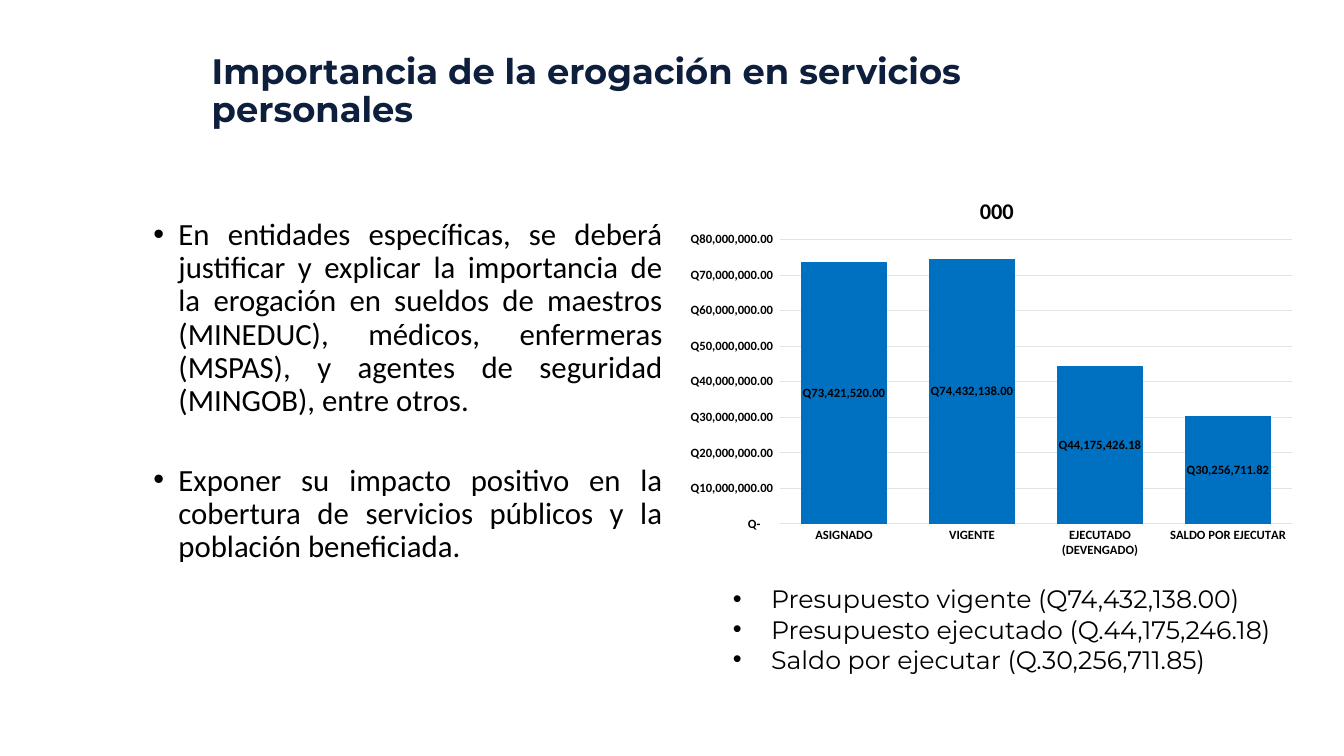
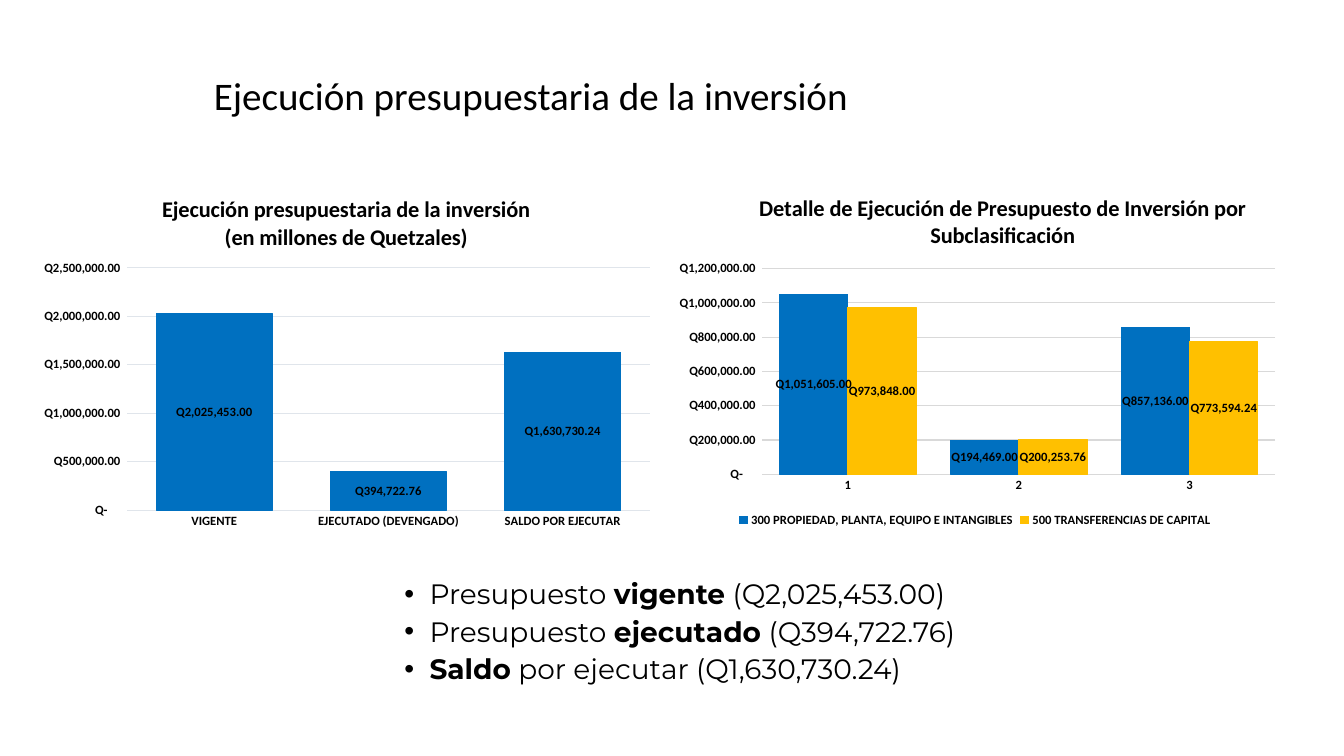
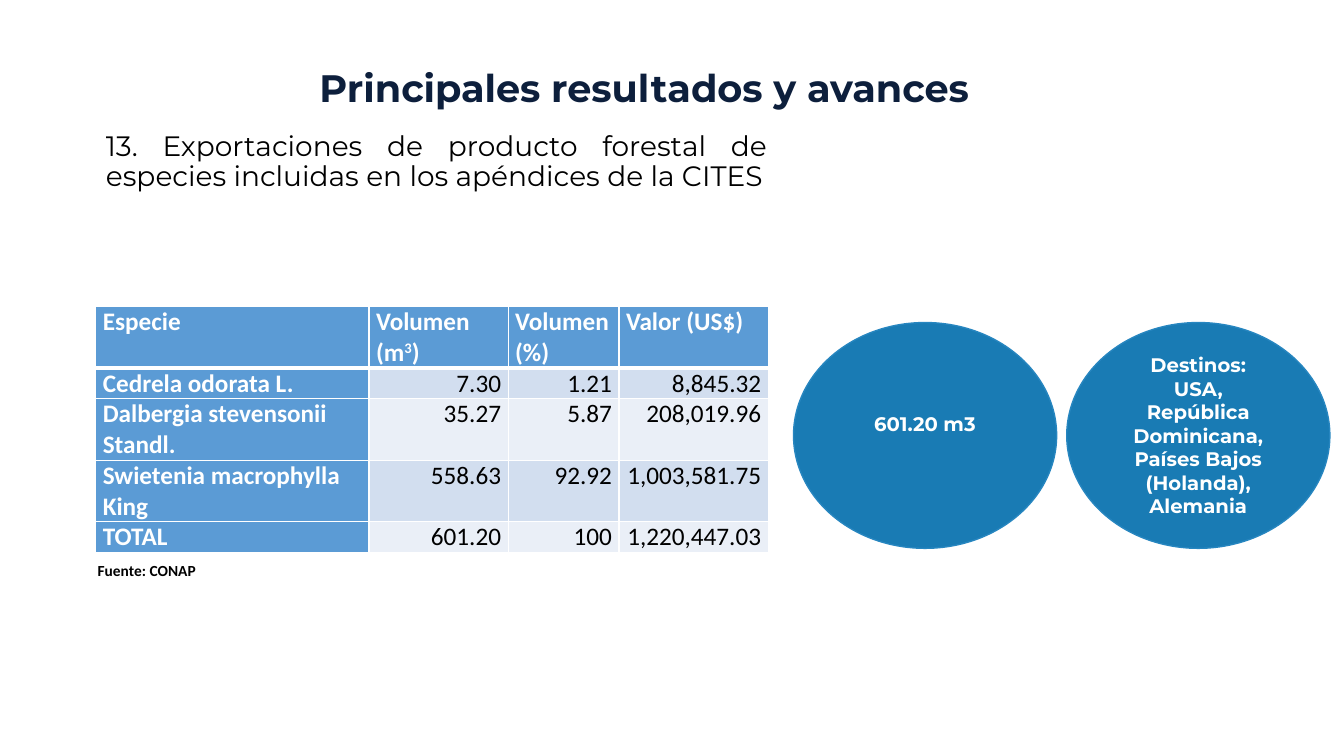
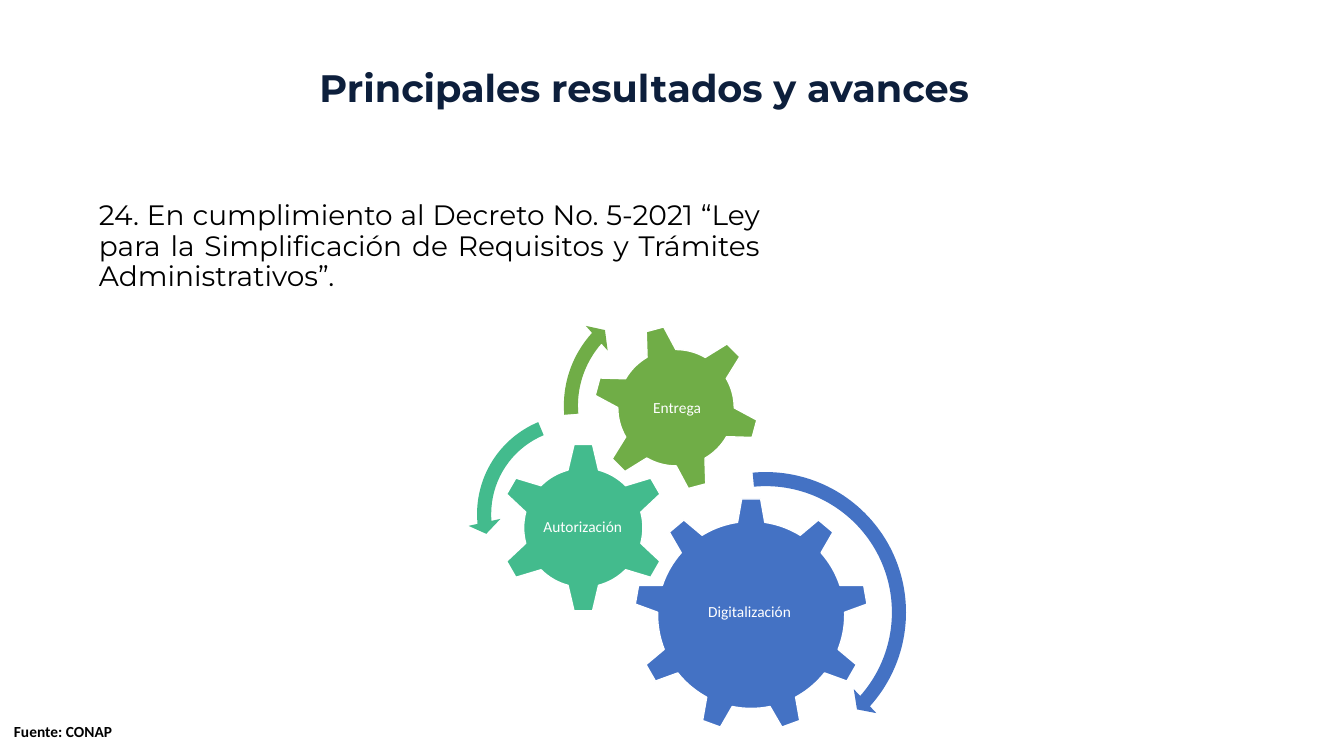
"""Builds four slides on budget execution and main results."""
from lxml.etree import SubElement
from pptx import Presentation
from pptx.chart.data import CategoryChartData
from pptx.dml.color import RGBColor
from pptx.enum.chart import XL_CHART_TYPE as CT, XL_LABEL_POSITION as LP
from pptx.enum.chart import XL_LEGEND_POSITION as LG, XL_TICK_MARK as TM
from pptx.enum.shapes import MSO_SHAPE as SH
from pptx.enum.text import MSO_ANCHOR as ANC, MSO_AUTO_SIZE as AUTO, PP_ALIGN as AL
from pptx.oxml.ns import qn
from pptx.util import Inches, Pt

C = {
    "black": "000000", "white": "FFFFFF", "navy": "0D1F3C",
    "bar": "0070C0", "amber": "FFC000", "grid": "E0E5EB", "gray": "D9D9D9",
    "oval": "197BB4", "oval_line": "2786C0",
    "head": "5B9BD5", "band1": "D2DEEF", "band2": "EAEFF7",
    "blue": "4472C4", "teal": "43BB8D", "green": "70AD47",
}
SANS, DISPLAY = "Calibri", "Montserrat"
MONEY = '_("Q"* #,##0.00_);_("Q"* \\(#,##0.00\\);_("Q"* "-"??_);_(@_)'


def rgb(name):
    return RGBColor.from_string(C[name])


def manual_layout(parent, after, **box):
    for old in parent.findall(qn("c:layout")):
        parent.remove(old)
    layout = SubElement(parent, qn("c:layout"))
    if after is None:
        parent.insert(0, layout)
    else:
        after.addnext(layout)
    ml = SubElement(layout, qn("c:manualLayout"))
    if "w" in box:
        SubElement(ml, qn("c:layoutTarget")).set("val", "inner")
    for key in ("x", "y"):
        SubElement(ml, qn(f"c:{key}Mode")).set("val", "edge")
    for key, value in box.items():
        SubElement(ml, qn(f"c:{key}")).set("val", str(value))


class Deck:
    def __init__(self):
        self.prs = Presentation()
        self.prs.slide_width, self.prs.slide_height = Inches(13.33), Inches(7.5)
        self.s = None

    def slide(self):
        self.s = self.prs.slides.add_slide(self.prs.slide_layouts[1])

    def font(self, f, size, name=SANS, color="black", bold=False):
        f.size, f.name, f.bold = Pt(size), name, bold
        f.color.rgb = rgb(color)

    def place(self, sp, box):
        sp.left, sp.top, sp.width, sp.height = map(Inches, box)
        sp.text_frame.auto_size = AUTO.NONE
        return sp

    def runs(self, p, text, size, name=SANS, color="black", bold=False):
        for part, mark in [(text, "")] if isinstance(text, str) else text:
            r = p.add_run()
            r.text = part
            self.font(r.font, size, name, color, bold or mark == "b")
            if mark == "sup":
                r.font._element.set("baseline", "30000")

    def fill_text(self, tf, lines, size, name=SANS, color="black", bold=False, align=AL.LEFT,
                  spacing=1.0, gap=0, bullet=None, anchor=ANC.TOP):
        tf.word_wrap = True
        tf.vertical_anchor = anchor
        for i, line in enumerate(lines):
            p = tf.add_paragraph() if i else tf.paragraphs[0]
            pPr = p._p.get_or_add_pPr()
            indent, hang = bullet or (0, 0)
            pPr.set("marL", str(Inches(indent)))
            pPr.set("indent", str(-Inches(hang)))
            if bullet:
                SubElement(pPr, qn("a:buFont")).set("typeface", "Arial")
                SubElement(pPr, qn("a:buChar")).set("char", "•")
            else:
                SubElement(pPr, qn("a:buNone"))
            p.alignment, p.line_spacing = align, spacing
            p.space_before, p.space_after = Pt(gap if i else 0), Pt(0)
            self.runs(p, line, size, name, color, bold)

    def title(self, text, box, size, name=DISPLAY, color="navy", bold=True, align=AL.LEFT):
        sp = self.place(self.s.shapes.title, box)
        self.fill_text(sp.text_frame, [text], size, name, color, bold, align, 0.9, anchor=ANC.MIDDLE)

    def results_title(self):
        self.title("Principales resultados y avances", (1.92, 0.39, 8.94, 1.01), 27.3, align=AL.CENTER)

    def body(self, lines, box, size, **style):
        sp = self.place(self.s.placeholders[1], box)
        self.fill_text(sp.text_frame, lines, size, spacing=0.9, **style)

    def text(self, lines, box, size, inset=None, **style):
        sp = self.s.shapes.add_textbox(*map(Inches, box))
        tf = sp.text_frame
        if inset is not None:
            tf.margin_left = tf.margin_right = tf.margin_top = tf.margin_bottom = Inches(inset)
        self.fill_text(tf, lines, size, **style)

    def source(self, left, top):
        self.text(["Fuente: CONAP"], (left, top, 6.67, 0.29), 11, bold=True)

    def shape(self, kind, box, fill, line=None, adj=(), rotation=0):
        sp = self.s.shapes.add_shape(kind, *map(Inches, box))
        sp.shadow.inherit = False
        sp.fill.solid()
        sp.fill.fore_color.rgb = rgb(fill)
        if line:
            sp.line.color.rgb, sp.line.width = rgb(line), Pt(1)
        else:
            sp.line.fill.background()
        for i, value in enumerate(adj):
            sp.adjustments[i] = value
        sp.rotation = rotation
        return sp

    def oval(self, left, lines, bottom=0.05):
        tf = self.shape(SH.OVAL, (left, 3.2, 2.61, 2.24), "oval", "oval_line").text_frame
        tf.margin_bottom = Inches(bottom)
        self.fill_text(tf, lines, 14, DISPLAY, "white", True, AL.CENTER, anchor=ANC.MIDDLE)

    def gear(self, kind, box, color, label, label_box, rotation=0):
        self.shape(kind, box, color, "white", rotation=rotation)
        self.text([label], label_box, 11, inset=0.02, color="white", align=AL.CENTER,
                  spacing=0.9, anchor=ANC.MIDDLE)

    def chart(self, box, title, cats, series, top, step, plot, title_at, grid="grid", legend=False):
        data = CategoryChartData(number_format=MONEY)
        data.categories = cats
        for name, values, _ in series:
            data.add_series(name, values)
        chart = self.s.shapes.add_chart(CT.COLUMN_CLUSTERED, *map(Inches, box), data).chart
        self.font(chart.font, 10, bold=True)
        tf = chart.chart_title.text_frame
        for i, line in enumerate(title):
            p = tf.add_paragraph() if i else tf.paragraphs[0]
            self.runs(p, line, 16, bold=True)
        title_el = chart.chart_title._element
        manual_layout(title_el, title_el.find(qn("c:tx")), x=title_at[0], y=title_at[1])
        area = chart._chartSpace.chart.plotArea
        manual_layout(area, None, **dict(zip("xywh", plot)))
        for axis in (chart.category_axis, chart.value_axis):
            axis.major_tick_mark = axis.minor_tick_mark = TM.NONE
            self.font(axis.tick_labels.font, 9, bold=True)
            axis.format.line.fill.background()
        if not legend:
            line = chart.category_axis.format.line
            line.color.rgb, line.width = rgb(grid), Pt(0.75)
        va = chart.value_axis
        va.minimum_scale, va.maximum_scale, va.major_unit = 0, top, step
        va.tick_labels.number_format, va.tick_labels.number_format_is_linked = MONEY, False
        line = va.major_gridlines.format.line
        line.color.rgb, line.width = rgb(grid), Pt(0.75)
        bars = chart.plots[0]
        bars.gap_width, bars.vary_by_categories = 50, False
        for ser, (_, _, color) in zip(bars.series, series):
            ser.format.fill.solid()
            ser.format.fill.fore_color.rgb = rgb(color)
            ser.format.line.color.rgb, ser.format.line.width = rgb(color), Pt(0.75)
            dl = ser.data_labels
            dl.show_value, dl.position = True, LP.CENTER
            dl.number_format, dl.number_format_is_linked = MONEY, False
            self.font(dl.font, 9, bold=True)
        chart.has_legend = legend
        if legend:
            chart.legend.position, chart.legend.include_in_layout = LG.BOTTOM, False
            self.font(chart.legend.font, 9, bold=True)

    def table(self, left, top, widths, heights, rows):
        tb = self.s.shapes.add_table(len(rows), len(widths), Inches(left), Inches(top),
                                     Inches(sum(widths)), Inches(sum(heights))).table
        tb.first_col = True
        for col, w in zip(tb.columns, widths):
            col.width = Inches(w)
        for row, h in zip(tb.rows, heights):
            row.height = Inches(h)
        for i, row in enumerate(rows):
            for j, text in enumerate(row):
                self.cell(tb.cell(i, j), text, i, i == 0 or j == 0)

    def cell(self, cell, text, row, header):
        cell.margin_left = cell.margin_right = Inches(0.07)
        cell.margin_top = cell.margin_bottom = 0
        tcPr = cell._tc.get_or_add_tcPr()
        for side in "LRTB":
            heavy = (row, side) in ((0, "B"), (1, "T"))
            ln = SubElement(tcPr, qn(f"a:ln{side}"), w=str(Pt(3 if heavy else 1)))
            SubElement(SubElement(ln, qn("a:solidFill")), qn("a:srgbClr")).set("val", C["white"])
        cell.fill.solid()
        cell.fill.fore_color.rgb = rgb("head" if header else "band1" if row % 2 else "band2")
        p = cell.text_frame.paragraphs[0]
        p.alignment = AL.LEFT if header else AL.RIGHT
        self.runs(p, text, 18, color="white" if header else "black", bold=header)


def personnel(d):
    d.slide()
    d.title("Importancia de la erogación en servicios personales", (2, 0.61, 9.59, 0.6), 25.2)
    d.body(["En entidades específicas, se deberá justificar y explicar la importancia de la erogación "
            "en sueldos de maestros (MINEDUC), médicos, enfermeras (MSPAS), y agentes de seguridad "
            "(MINGOB), entre otros.",
            "Exponer su impacto positivo en la cobertura de servicios públicos y la población "
            "beneficiada."],
           (0.92, 2.12, 5.75, 4.64), 22, align=AL.JUSTIFY, gap=33, bullet=(0.75, 0.25))
    d.text(["Presupuesto vigente (Q74,432,138.00)",
            "Presupuesto ejecutado (Q.44,175,246.18)",
            "Saldo por ejecutar (Q.30,256,711.85)"],
           (6.67, 5.74, 6.27, 1.01), 18, name=DISPLAY, bullet=(0.88, 0.38))
    d.chart((6.67, 1.71, 6.27, 3.92), ["000"],
            ["ASIGNADO", "VIGENTE", "EJECUTADO (DEVENGADO)", "SALDO POR EJECUTAR"],
            [("000", (73421520, 74432138, 44175426.18, 30256711.82), "bar")],
            80e6, 10e6, (0.17, 0.17, 0.81, 0.72), (0.48, 0.05))


def investment(d):
    d.slide()
    d.title("Ejecución presupuestaria de la inversión", (2.02, 0.5, 9.64, 0.94), 27.9,
            SANS, "black", False)
    d.body([[("Presupuesto ", ""), ("vigente", "b"), (" (Q2,025,453.00)", "")],
            [("Presupuesto ", ""), ("ejecutado", "b"), (" (Q394,722.76)", "")],
            [("Saldo", "b"), (" por ejecutar (Q1,630,730.24)", "")]],
           (3.41, 5.71, 7.62, 1.3), 20, name=DISPLAY, gap=5, bullet=(0.75, 0.25))
    d.chart((0.25, 1.76, 6.32, 3.59),
            ["Ejecución presupuestaria de la inversión", "(en millones de Quetzales)"],
            ["VIGENTE", "EJECUTADO (DEVENGADO)", "SALDO POR EJECUTAR"],
            [("Inversión", (2025453, 394722.76, 1630730.24), "bar")],
            2.5e6, 5e5, (0.16, 0.25, 0.82, 0.67), (0.21, 0.04))
    d.chart((6.57, 1.75, 6.2, 3.52),
            ["Detalle de Ejecución de Presupuesto de Inversión por", "Subclasificación"],
            ["1", "2", "3"],
            [("300 PROPIEDAD, PLANTA, EQUIPO E INTANGIBLES", (1051605, 194469, 857136), "bar"),
             ("500 TRANSFERENCIAS DE CAPITAL", (973848, 200253.76, 773594.24), "amber")],
            1.2e6, 2e5, (0.16, 0.26, 0.82, 0.58), (0.15, 0.04), "gray", True)


def exports(d):
    d.slide()
    d.results_title()
    d.body(["13. Exportaciones de producto forestal de especies incluidas en los apéndices de la CITES"],
           (0.95, 1.26, 6.76, 1.5), 20, name=DISPLAY, align=AL.JUSTIFY)
    d.table(0.95, 3.04, (2.71, 1.38, 1.1, 1.48), (0.6, 0.3, 0.6, 0.6, 0.3), [
        ("Especie", [("Volumen (m", ""), ("3", "sup"), (")", "")], "Volumen (%)", "Valor (US$)"),
        ("Cedrela odorata L.", "7.30", "1.21", "8,845.32"),
        ("Dalbergia stevensonii Standl.", "35.27", "5.87", "208,019.96"),
        ("Swietenia macrophylla King", "558.63", "92.92", "1,003,581.75"),
        ("TOTAL", "601.20", "100", "1,220,447.03"),
    ])
    d.source(0.87, 5.52)
    d.oval(7.87, ["601.20 m3"], bottom=0.28)
    d.oval(10.58, ["Destinos:", "USA,", "República Dominicana, Países Bajos (Holanda), Alemania"])


def simplification(d):
    d.slide()
    d.results_title()
    d.body(["24. En cumplimiento al Decreto No. 5-2021 “Ley para la Simplificación de Requisitos y "
            "Trámites Administrativos”."],
           (0.88, 1.95, 6.76, 1.2), 20, name=DISPLAY, align=AL.JUSTIFY)
    d.source(0.04, 7.11)
    d.gear(SH.GEAR_9, (6.29, 4.94, 2.32, 2.32), "blue", "Digitalización", (6.74, 5.48, 1.39, 1.19))
    d.gear(SH.GEAR_6, (4.94, 4.39, 1.69, 1.69), "teal", "Autorización", (5.36, 4.82, 0.84, 0.83))
    d.gear(SH.GEAR_6, (5.88, 3.22, 1.65, 1.65), "green", "Entrega", (6.25, 3.59, 0.93, 0.93), 345)
    for kind, left, top, size, color, adj in (
        (SH.CIRCULAR_ARROW, 6.11, 4.59, 2.97, "blue", (0.047, 2.99, 25.077, 158.797, 0.055)),
        (SH.LEFT_CIRCULAR_ARROW, 4.64, 4.02, 2.16, "teal", (0.065, 4.3, 104.891, 148.378, 0.075)),
        (SH.CIRCULAR_ARROW, 5.5, 2.86, 2.33, "green", (0.06, 3.941, 133.138, 105.082, 0.07)),
    ):
        d.shape(kind, (left, top, size, size), color, adj=adj)


def main():
    d = Deck()
    for build in (personnel, investment, exports, simplification):
        build(d)
    d.prs.save("out.pptx")


if __name__ == "__main__":
    main()
